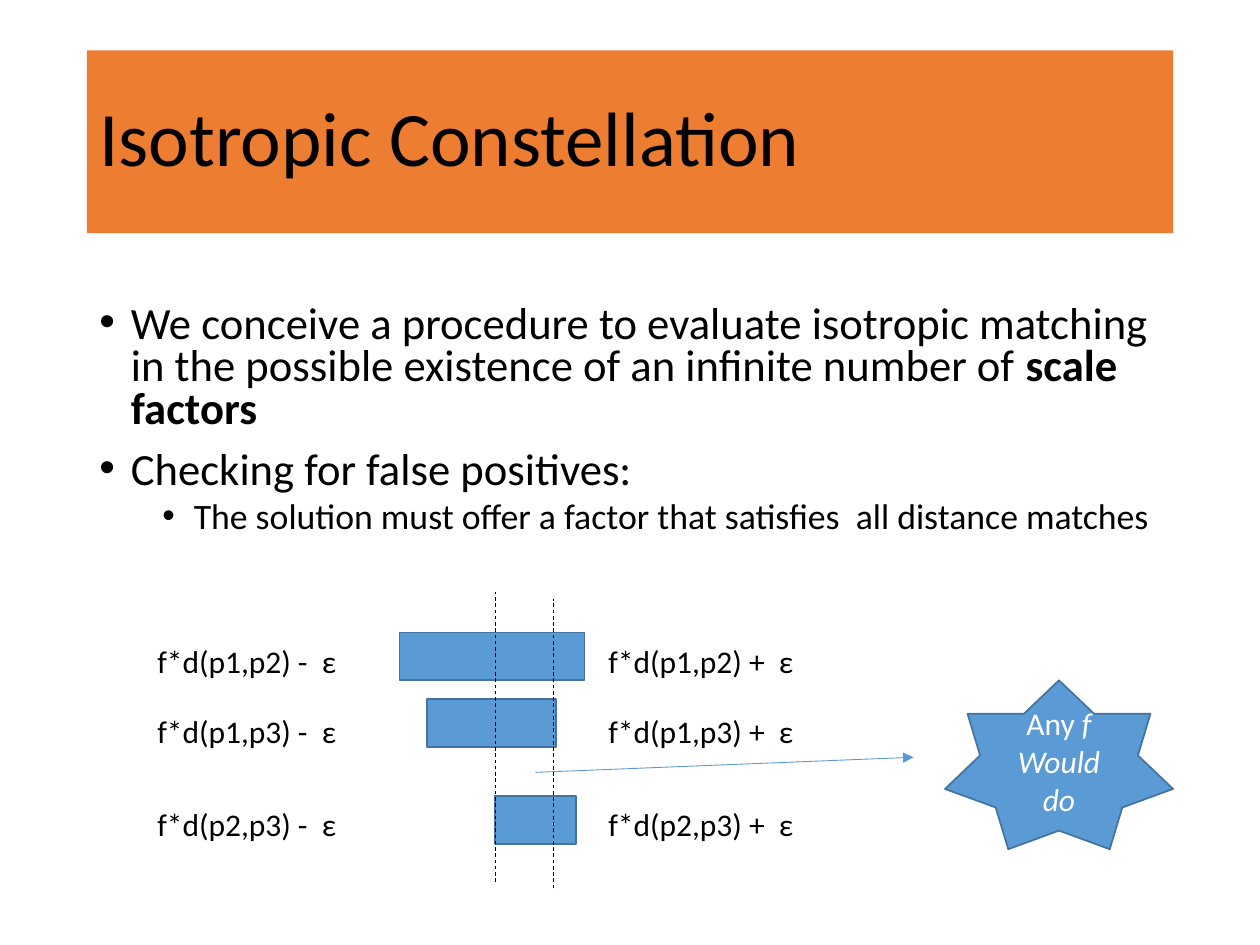
from dataclasses import dataclass

from lxml import etree
from pptx import Presentation
from pptx.dml.color import RGBColor
from pptx.enum.dml import MSO_LINE
from pptx.enum.shapes import MSO_CONNECTOR, MSO_SHAPE
from pptx.enum.text import MSO_ANCHOR, MSO_AUTO_SIZE, PP_ALIGN
from pptx.oxml.ns import qn
from pptx.util import Inches, Pt

RECTANGLE = MSO_SHAPE.RECTANGLE
STAR = MSO_SHAPE.STAR_7_POINT
STRAIGHT = MSO_CONNECTOR.STRAIGHT
DASH = MSO_LINE.DASH
MIDDLE = MSO_ANCHOR.MIDDLE
CENTER = PP_ALIGN.CENTER
FIT_SHAPE = MSO_AUTO_SIZE.SHAPE_TO_FIT_TEXT


@dataclass(frozen=True)
class Theme:
    font: str = "Calibri"
    ink: RGBColor = RGBColor(0x00, 0x00, 0x00)
    white: RGBColor = RGBColor(0xFF, 0xFF, 0xFF)
    banner: RGBColor = RGBColor(0xED, 0x7D, 0x31)
    blue: RGBColor = RGBColor(0x5B, 0x9B, 0xD5)
    outline: RGBColor = RGBColor(0x43, 0x73, 0x9E)
    title_size: float = 44
    body_size: float = 25.5
    detail_size: float = 20.4
    label_size: float = 18


THEME = Theme()

BULLETS = [
    (0, [("We conceive a procedure to evaluate isotropic matching in the possible "
          "existence of an infinite number of ", False), ("scale factors", True)]),
    (1, [("Checking for false positives:", False)]),
    (2, [("The solution must offer a factor that satisfies  all distance matches", False)]),
]
DETAIL_INDEX = 2

INTERVALS = [
    ("p1,p2", 3.17, 5.02, 1.47, 5.05),
    ("p1,p3", 3.39, 5.55, 1.02, 5.6),
    ("p2,p3", 3.93, 6.32, 0.64, 6.34),
]
BOUNDS = [("-", 1.15, 1.7), ("+", 4.73, 1.75)]
FACTOR_LIMITS = [(3.93, 7, 4.7), (4.39, 7.05, 4.75)]


def box(left, top, width, height):
    return Inches(left), Inches(top), Inches(width), Inches(height)


def style_run(run, size, color=THEME.ink, bold=False, italic=False):
    run.font.name = THEME.font
    run.font.size = Pt(size)
    run.font.color.rgb = color
    run.font.bold = bold
    run.font.italic = italic


def add_run(paragraph, text, size, **style):
    run = paragraph.add_run()
    run.text = text
    style_run(run, size, **style)


def add_filled(slide, preset, place, fill, outline=None):
    shape = slide.shapes.add_shape(preset, *box(*place))
    shape.shadow.inherit = False
    shape.fill.solid()
    shape.fill.fore_color.rgb = fill
    if outline is None:
        shape.line.fill.background()
    else:
        shape.line.color.rgb = outline
        shape.line.width = Pt(1)
    return shape


def add_title(slide, text):
    banner = add_filled(slide, RECTANGLE, (0.69, 0.4, 8.62, 1.45), THEME.banner)
    banner.text_frame.vertical_anchor = MIDDLE
    heading = banner.text_frame.paragraphs[0]
    heading.alignment = PP_ALIGN.LEFT
    heading.line_spacing = 0.9
    add_run(heading, text, THEME.title_size)


def set_bullet(paragraph, indent):
    properties = paragraph._p.get_or_add_pPr()
    properties.set("marL", str(Inches(indent)))
    properties.set("indent", str(Inches(-0.25)))
    font = etree.SubElement(properties, qn("a:buFont"))
    font.set("typeface", "Arial")
    bullet = etree.SubElement(properties, qn("a:buChar"))
    bullet.set("char", "•")


def add_bullets(slide):
    body = slide.shapes.add_textbox(*box(0.69, 2.37, 8.63, 2.13)).text_frame
    body.word_wrap = True
    for index, pieces in BULLETS:
        point = body.add_paragraph() if index else body.paragraphs[0]
        detail = index == DETAIL_INDEX
        point.level = 1 if detail else 0
        point.line_spacing = 0.8
        point.space_before = Pt(5 if detail else 10)
        set_bullet(point, 0.75 if detail else 0.25)
        for text, bold in pieces:
            add_run(point, text, THEME.detail_size if detail else THEME.body_size, bold=bold)


def add_label(slide, text, left, top, width):
    label = slide.shapes.add_textbox(*box(left, top, width, 0.4)).text_frame
    label.word_wrap = False
    label.auto_size = FIT_SHAPE
    label.text = text
    style_run(label.paragraphs[0].runs[0], THEME.label_size)


def add_interval(slide, pair, left, top, width, label_top):
    add_filled(slide, RECTANGLE, (left, top, width, 0.38), THEME.blue, THEME.outline)
    for sign, label_left, label_width in BOUNDS:
        add_label(slide, f"f*d({pair}) {sign}  ε", label_left, label_top, label_width)


def add_line(slide, start, end, color):
    connector = slide.shapes.add_connector(STRAIGHT, *map(Inches, start + end))
    connector.line.color.rgb = color
    connector.line.width = Pt(0.5)
    etree.SubElement(connector._element.spPr, qn("a:effectLst"))
    return connector


def add_arrow(slide, start, end):
    arrow = add_line(slide, start, end, THEME.blue)
    tail = etree.SubElement(arrow.line._get_or_add_ln(), qn("a:tailEnd"))
    tail.set("type", "triangle")


def add_conclusion(slide):
    star = add_filled(slide, STAR, (7.5, 5.4, 1.81, 1.34), THEME.blue, THEME.outline)
    message = star.text_frame
    message.word_wrap = True
    message.vertical_anchor = MIDDLE
    lines = [[("Any ", False), ("f", True)], [("Would do", True)]]
    for index, pieces in enumerate(lines):
        line = message.add_paragraph() if index else message.paragraphs[0]
        line.alignment = CENTER
        for text, italic in pieces:
            add_run(line, text, THEME.label_size, color=THEME.white, italic=italic)


def main():
    presentation = Presentation()
    presentation.slide_width = Inches(10)
    presentation.slide_height = Inches(7.5)
    slide = presentation.slides.add_slide(presentation.slide_layouts[6])
    add_title(slide, "Isotropic Constellation")
    add_bullets(slide)
    for interval in INTERVALS:
        add_interval(slide, *interval)
    for x, bottom, top in FACTOR_LIMITS:
        limit = add_line(slide, (x, bottom), (x, top), THEME.ink)
        limit.line.dash_style = DASH
    add_arrow(slide, (4.25, 6.13), (7.25, 6.01))
    add_conclusion(slide)
    presentation.save("out.pptx")


if __name__ == "__main__":
    main()
